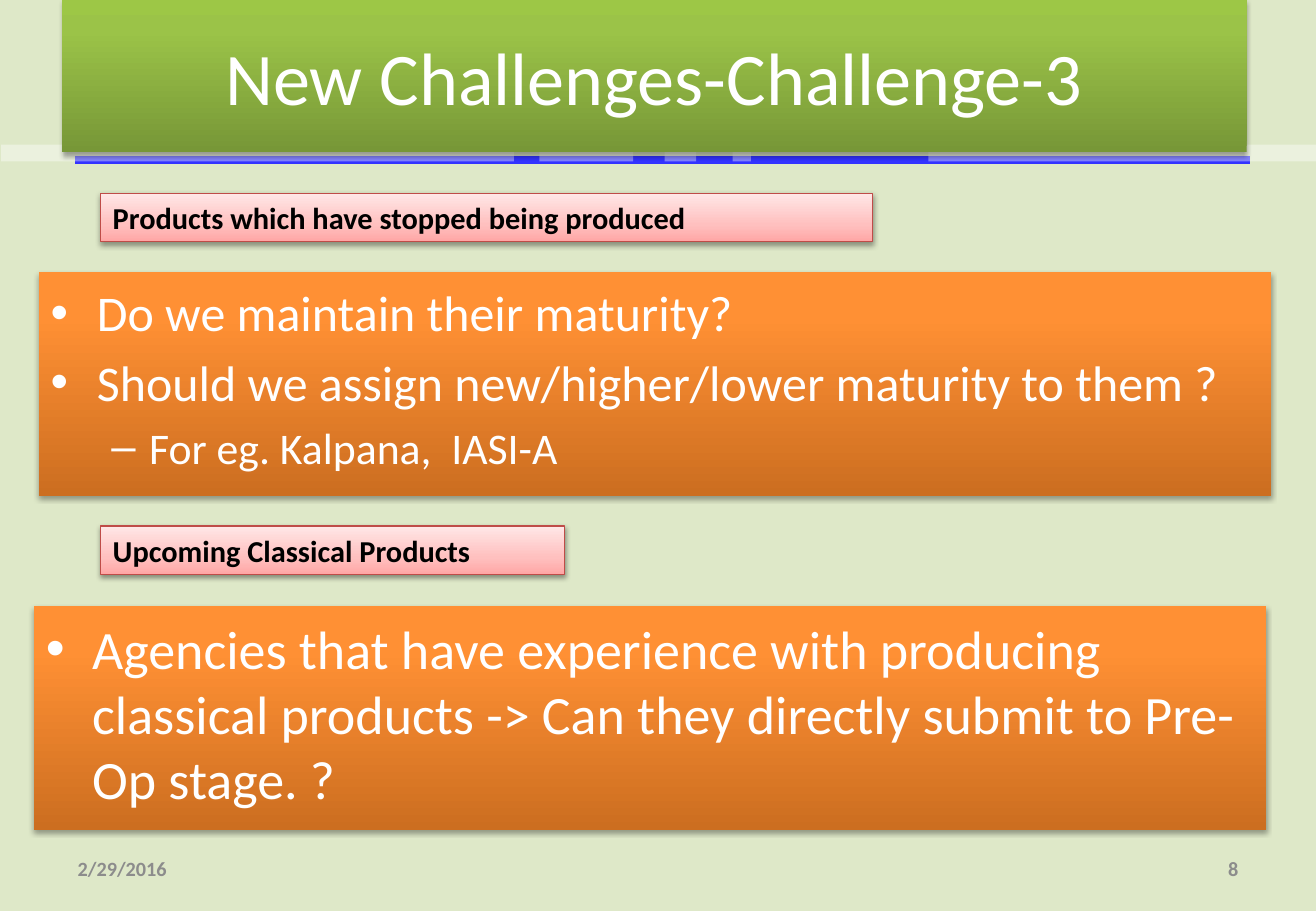
from lxml.etree import SubElement
from pptx import Presentation
from pptx.dml.color import RGBColor
from pptx.enum.shapes import MSO_CONNECTOR, MSO_SHAPE
from pptx.enum.text import MSO_ANCHOR, PP_ALIGN
from pptx.oxml import parse_xml
from pptx.oxml.ns import nsdecls, qn
from pptx.util import Emu, Inches, Pt

# Content: places are percentages of the slide (left, top, width, height)
TITLE = ("New Challenges-Challenge-3", (4.71, 0, 90.03, 16.67))
LABELS = [
    ("Products which have stopped being produced", (7.66, 21.2, 58.63, 5.33)),
    ("Upcoming Classical Products", (7.66, 57.73, 35.27, 5.33)),
]
PANELS = [  # each line: level, size, text
    ((2.95, 29.87, 93.63, 24.53), [
        (0, 29.6, "Do we maintain their maturity?"),
        (0, 29.6, "Should we assign new/higher/lower maturity to them ?"),
        (1, 25.9, "For eg. Kalpana,  IASI-A")]),
    ((2.59, 66.53, 93.63, 24.53), [
        (0, 32, "Agencies that have experience with producing classical "
                "products -> Can they directly submit to Pre-Op stage. ?")]),
]
FOOTERS = [
    ("2/29/2016", (4.99, 92.67, 23.36, 5.33), PP_ALIGN.LEFT),
    ("8", (71.65, 92.67, 23.36, 5.33), PP_ALIGN.RIGHT),
]
RULE = (5.72, 95.01, 17.6)  # from x, to x, y
STRIP_ROW = (15.87, 1.87)   # top, height
STRIPS = [(0.09, 38.97), (41, 7.11), (50.51, 2.4), (55.68, 1.39), (70.54, 29.55)]

COLORS = {"page": "DEE8C8", "rule": "3333FF", "white": "FFFFFF",
          "black": "000000", "grey": "8C8C8C", "label_edge": "BF4C48"}
GRADIENTS = {  # stops run from bottom to top
    "orange": [(0, "CC6E20"), (80, "FF9034"), (100, "FF9136")],
    "green": [(0, "779737"), (80, "9BC348"), (100, "9DC746")],
    "pink": [(0, "FFA6A5"), (35, "FFC0BF"), (100, "FFE7E7")],
}
BULLETS = [("•", 0.38, 0.38), ("–", 0.81, 0.31)]  # mark, indent, hanging

prs = Presentation()
prs.slide_width, prs.slide_height = Inches(10.83), Inches(7.5)
s = prs.slides.add_slide(prs.slide_layouts[6])


def rgb(name):
    return RGBColor.from_string(COLORS[name])


def across(share):
    return Emu(round(prs.slide_width * share / 100))


def down(share):
    return Emu(round(prs.slide_height * share / 100))


def place(box):
    x, y, w, h = box
    return across(x), down(y), across(w), down(h)


def add_box(box):
    sp = s.shapes.add_shape(MSO_SHAPE.RECTANGLE, *place(box))
    sp.shadow.inherit = False
    sp.line.fill.background()
    return sp


def add_gradient_box(box, gradient, shadow_alpha=35, shadow_dist=1.8):
    sp = add_box(box)
    sp.fill.background()
    spPr = sp._element.spPr
    stops = "".join(f'<a:gs pos="{pos * 1000}"><a:srgbClr val="{c}"/></a:gs>'
                    for pos, c in GRADIENTS[gradient])
    spPr.replace(spPr.find(qn("a:noFill")), parse_xml(
        f'<a:gradFill {nsdecls("a")} rotWithShape="1"><a:gsLst>{stops}</a:gsLst>'
        '<a:lin ang="16200000" scaled="0"/></a:gradFill>'))
    spPr.find(qn("a:effectLst")).append(parse_xml(
        f'<a:outerShdw {nsdecls("a")} blurRad="{Pt(3.1)}" dist="{Pt(shadow_dist)}" '
        f'dir="5400000" rotWithShape="0"><a:srgbClr val="{COLORS["black"]}">'
        f'<a:alpha val="{shadow_alpha * 1000}"/></a:srgbClr></a:outerShdw>'))
    return sp


def write(p, text, size, color, bold=False, align=PP_ALIGN.LEFT):
    p.alignment = align
    r = p.add_run()
    r.text = text
    r.font.color.rgb = rgb(color)
    for name, value in {"name": "Calibri", "size": Pt(size), "bold": bold}.items():
        setattr(r.font, name, value)


def frame(sp, anchor):
    tf = sp.text_frame
    tf.word_wrap = True
    tf.vertical_anchor = anchor
    return tf


# Background, rule and pale strips
s.background.fill.solid()
s.background.fill.fore_color.rgb = rgb("page")
x1, x2, y = RULE
rule = s.shapes.add_connector(MSO_CONNECTOR.STRAIGHT, across(x1), down(y), across(x2), down(y))
rule.line.color.rgb = rgb("rule")
rule.line.width = Pt(4.5)
SubElement(rule._element.spPr, qn("a:effectLst"))
for x, w in STRIPS:
    strip = add_box((x, STRIP_ROW[0], w, STRIP_ROW[1]))
    strip.fill.solid()
    strip.fill.fore_color.rgb = rgb("white")
    SubElement(strip._element.spPr.find(".//" + qn("a:srgbClr")), qn("a:alpha"), val="40000")

# Bulleted panels
for box, lines in PANELS:
    tf = frame(add_gradient_box(box, "orange"), MSO_ANCHOR.TOP)
    tf.margin_top = Inches(0.08)
    for i, (level, size, text) in enumerate(lines):
        p = tf.add_paragraph() if i else tf.paragraphs[0]
        mark, indent, hanging = BULLETS[level]
        pPr = p._p.get_or_add_pPr()
        pPr.set("marL", str(Inches(indent)))
        pPr.set("indent", str(-Inches(hanging)))
        SubElement(pPr, qn("a:buFont"), typeface="Arial")
        SubElement(pPr, qn("a:buChar"), char=mark)
        p.level = level
        if i:
            p.space_before = Pt(round(size * 0.2, 1))
        write(p, text, size, "white")

# Date and slide number
for text, box, align in FOOTERS:
    tf = frame(s.shapes.add_textbox(*place(box)), MSO_ANCHOR.MIDDLE)
    write(tf.paragraphs[0], text, 12, "grey", True, align)

# Title
text, box = TITLE
tf = frame(add_gradient_box(box, "green"), MSO_ANCHOR.MIDDLE)
write(tf.paragraphs[0], text, 44, "white", align=PP_ALIGN.CENTER)

# Section labels
for text, box in LABELS:
    sp = add_gradient_box(box, "pink", 38, 1.6)
    sp.line.color.rgb = rgb("label_edge")
    sp.line.width = Pt(0.75)
    write(frame(sp, MSO_ANCHOR.TOP).paragraphs[0], text, 18, "black", True)

prs.save("out.pptx")
